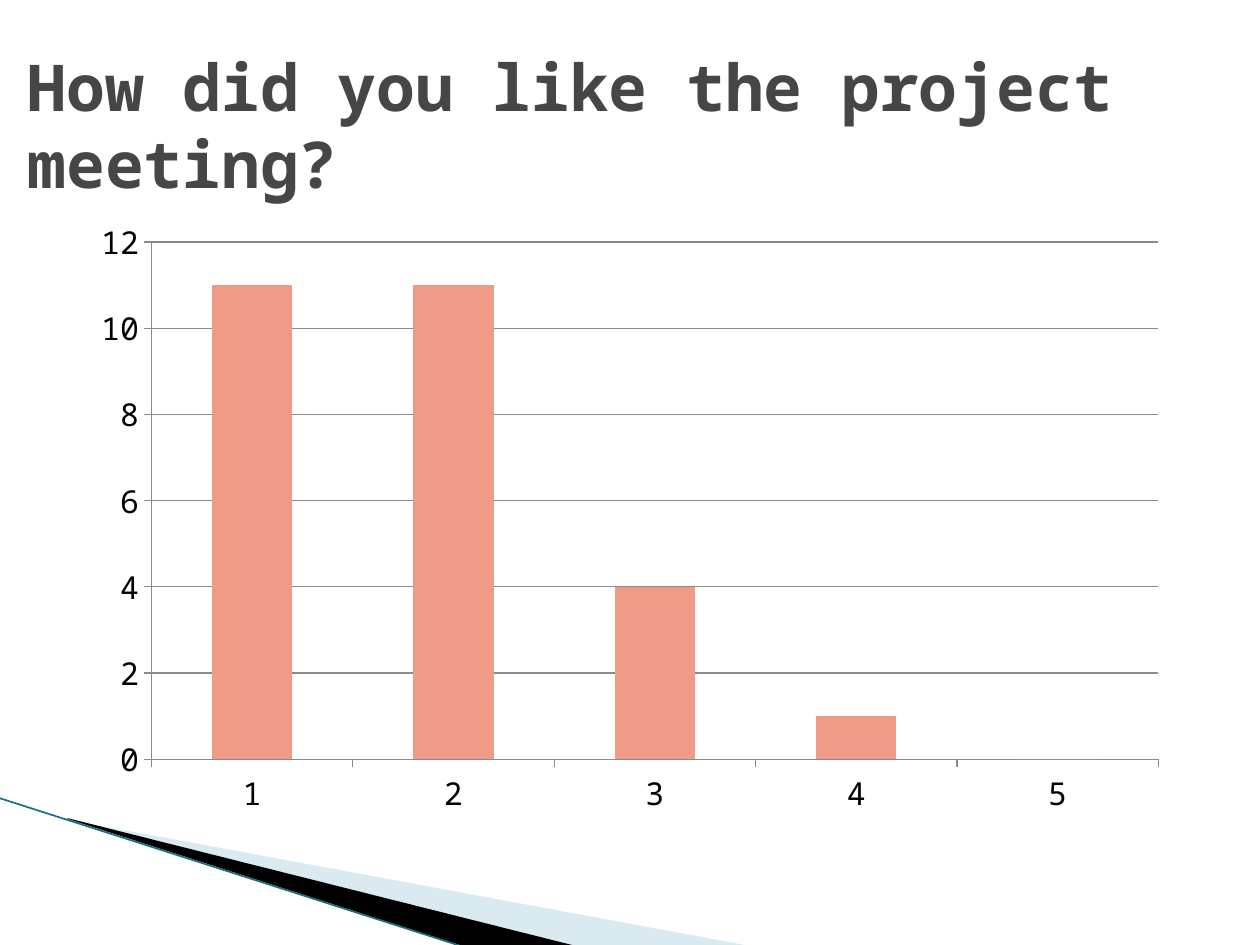
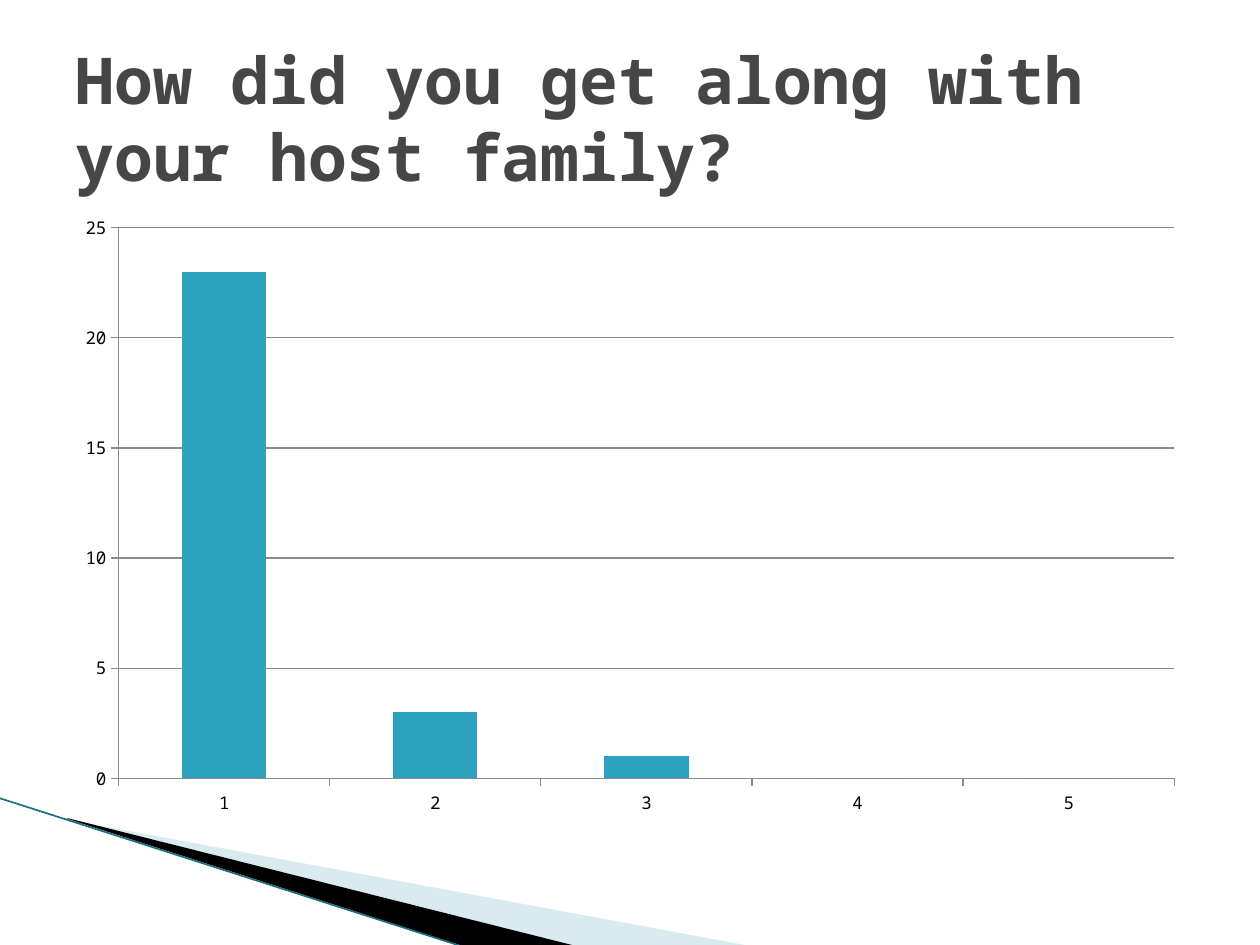
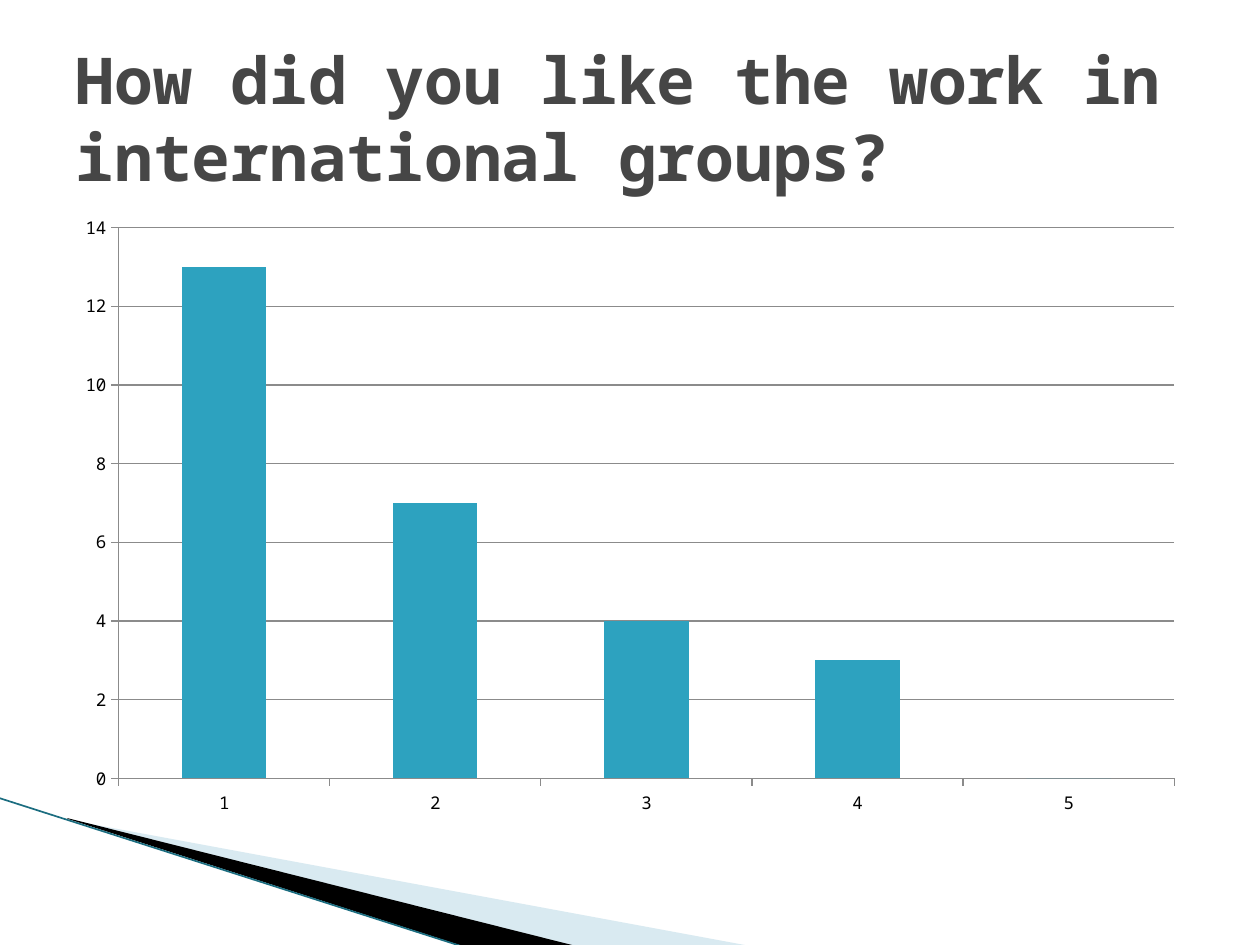
"""Build three survey result slides, each with a question and a column chart."""
from lxml import etree
from pptx import Presentation, util as u
from pptx.chart.data import CategoryChartData
from pptx.dml.color import RGBColor
from pptx.enum import chart as ch, shapes, text
from pptx.oxml import parse_xml
from pptx.oxml.ns import nsdecls, qn

PX = 914400 / 126
FONT = "Noto Sans Mono"
INK, BLACK, GREY = "464646", "000000", "8B8B8B"
PALE, TEAL, BLUE, SALMON = "A0CBDC", "1B6D80", "2DA2BF", "F09B87"


def px(*lengths):
    return [u.Emu(round(length * PX)) for length in lengths]


def write(frame, words, size=18, color=BLACK, bold=False, align=text.PP_ALIGN.LEFT):
    frame.word_wrap = True
    frame.auto_size = text.MSO_AUTO_SIZE.NONE
    frame.vertical_anchor = text.MSO_ANCHOR.MIDDLE
    frame.text = words
    paragraph = frame.paragraphs[0]
    paragraph.alignment = align
    font = paragraph.runs[0].font
    font.name, font.size, font.bold = FONT, u.Pt(size), bold
    font.color.rgb = RGBColor.from_string(color)


prs = Presentation()
prs.slide_width, prs.slide_height = px(1260, 945)
layout = prs.slide_layouts[5]

wide_plot = (118, 228, 1056, 551)
surveys = [
    ("How did you like the project meeting?", (15, 45), [11, 11, 4, 1, 0],
     SALMON, 18, 12, 2, (152, 242, 1007, 517)),
    ("How did you get along with your host family?", (63, 38), [23, 3, 1, 0, 0],
     BLUE, 10, 25, 5, wide_plot),
    ("How did you like the work in international groups?", (63, 38), [13, 7, 4, 3, 0],
     BLUE, 10, 14, 2, wide_plot),
]
chart_left, chart_top, chart_width, chart_height = 63, 204, 1134, 624

for question, corner, votes, color, size, top_vote, step, plot_box in surveys:
    slide = prs.slides.add_slide(layout)
    title = slide.shapes.title
    title.left, title.top, title.width, title.height = px(*corner, 1134, 158)
    write(title.text_frame, question, size=36.9, color=INK, bold=True)

    data = CategoryChartData()
    data.categories = ["1", "2", "3", "4", "5"]
    data.add_series("Series 1", votes)
    chart = slide.shapes.add_chart(
        ch.XL_CHART_TYPE.COLUMN_CLUSTERED,
        *px(chart_left, chart_top, chart_width, chart_height), data).chart
    chart.has_title = chart.has_legend = False
    chart.font.name, chart.font.size = FONT, u.Pt(size)
    chart.font.color.rgb = RGBColor.from_string(BLACK)

    columns = chart.plots[0]
    columns.gap_width = 150
    columns.vary_by_categories = False
    columns.series[0].format.fill.solid()
    columns.series[0].format.fill.fore_color.rgb = RGBColor.from_string(color)

    grades, counts = chart.category_axis, chart.value_axis
    counts.minimum_scale, counts.maximum_scale, counts.major_unit = 0, top_vote, step
    counts.has_major_gridlines = True
    for axis in (grades, counts):
        axis.major_tick_mark = ch.XL_TICK_MARK.OUTSIDE
    for rule in (grades, counts, counts.major_gridlines):
        rule.format.line.color.rgb = RGBColor.from_string(GREY)
        rule.format.line.width = u.Pt(0.75)

    left, top, width, height = plot_box
    shares = {"x": (left - chart_left) / chart_width, "y": (top - chart_top) / chart_height,
              "w": width / chart_width, "h": height / chart_height}
    modes = '<c:layoutTarget val="inner"/><c:xMode val="edge"/><c:yMode val="edge"/>'
    values = "".join(f'<c:{key} val="{share:.3f}"/>' for key, share in shares.items())
    plot_area = chart.element.find(".//" + qn("c:plotArea"))
    for default in plot_area.findall(qn("c:layout")):
        plot_area.remove(default)
    plot_area.insert(0, parse_xml(
        f'<c:layout {nsdecls("c")}><c:manualLayout>{modes}{values}</c:manualLayout></c:layout>'))

wedges = [
    (PALE, 40, [(69, 820), (750, 946), (575, 946), (69, 819)]),
    (BLACK, 100, [(67, 818), (576, 946), (469, 948), (68, 819)]),
]
swoosh = []
for color, opacity, corners in wedges:
    builder = slide.shapes.build_freeform(*corners[0], scale=PX)
    builder.add_line_segments(corners[1:], close=True)
    wedge = builder.convert_to_shape()
    wedge.shadow.inherit = False
    wedge.line.fill.background()
    wedge.fill.solid()
    wedge.fill.fore_color.rgb = RGBColor.from_string(color)
    tint = wedge.element.spPr.find(".//" + qn("a:srgbClr"))
    etree.SubElement(tint, qn("a:alpha")).set("val", str(opacity * 1000))
    swoosh.append(wedge)

edge = slide.shapes.add_connector(shapes.MSO_CONNECTOR.STRAIGHT, *px(-1, 798, 467, 948))
edge.line.color.rgb = RGBColor.from_string(TEAL)
edge.line.width = u.Pt(0.95)
etree.SubElement(edge.element.spPr, qn("a:effectLst"))
swoosh.append(edge)

for order, part in enumerate(swoosh):
    part.element.find(".//" + qn("p:cNvPr")).set("id", str(20 + order))
    layout.shapes.element.insert(2 + order, part.element)

prs.save("out.pptx")
